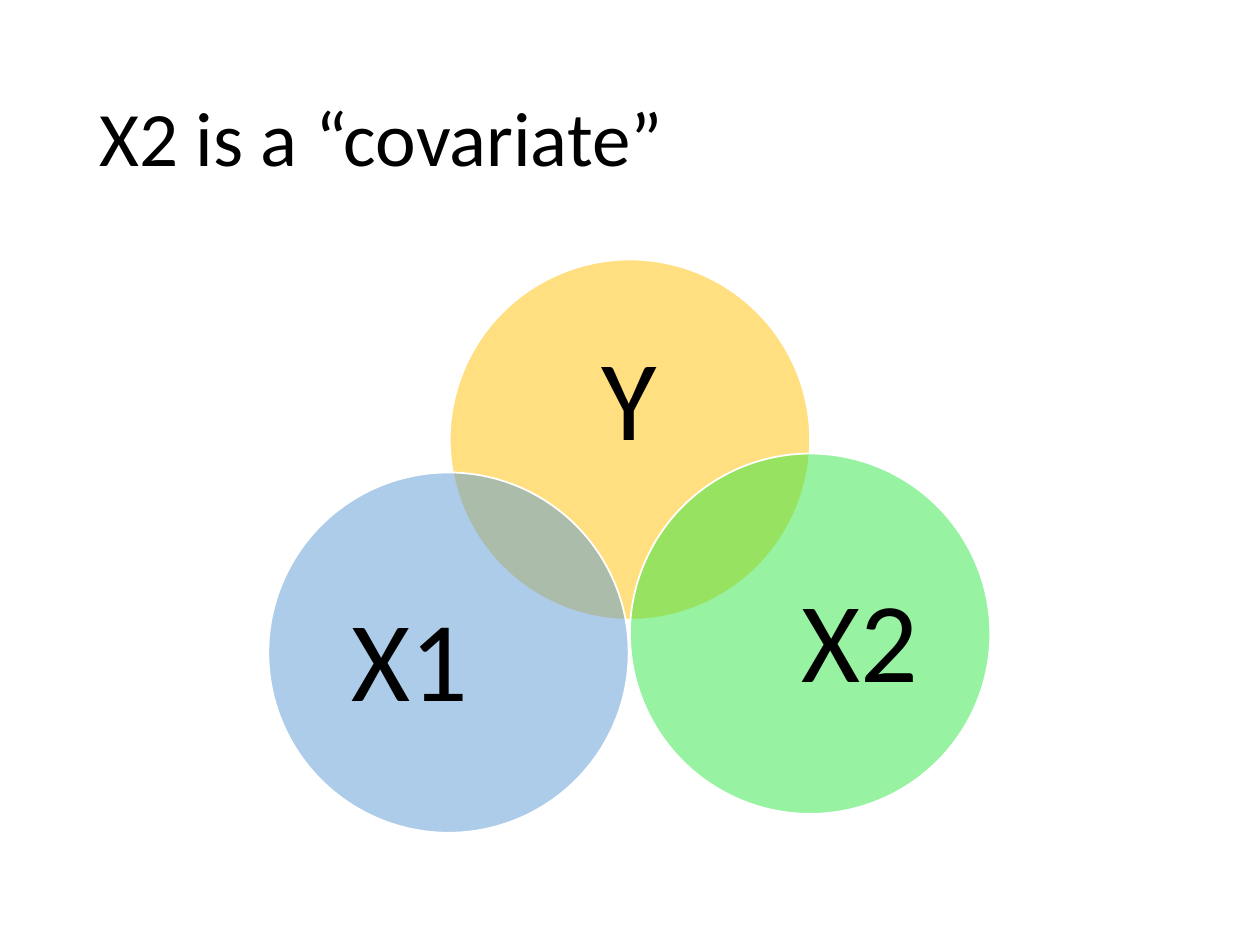
from lxml import etree
from pptx import Presentation
from pptx import util as u
from pptx.dml.color import RGBColor
from pptx.enum import shapes, text
from pptx.oxml.ns import qn

BLACK = RGBColor(0x00, 0x00, 0x00)
WHITE = RGBColor(0xFF, 0xFF, 0xFF)
GOLD = RGBColor(0xFF, 0xC0, 0x00)
GREEN = RGBColor(0x30, 0xE8, 0x45)
BLUE = RGBColor(0x5B, 0x9B, 0xD5)


class Deck:
    """Draws styled elements on a slide, placed on a grid of 0.01 inch units."""

    font = "Calibri"
    unit = u.Inches(0.01)
    size = 286

    def __init__(self):
        self.prs = Presentation()
        self.prs.slide_width, self.prs.slide_height = self.grid(1000, 750)
        self.slide = self.prs.slides.add_slide(self.prs.slide_layouts[6])

    def grid(self, *cells):
        return [self.unit * cell for cell in cells]

    def label(self, words, box, points, align, inset=(0, 0)):
        frame = self.slide.shapes.add_textbox(*self.grid(*box)).text_frame
        frame.word_wrap = True
        frame.vertical_anchor = text.MSO_ANCHOR.MIDDLE
        side, edge = self.grid(*inset)
        frame.margin_left = frame.margin_right = side
        frame.margin_top = frame.margin_bottom = edge
        para = frame.paragraphs[0]
        para.text = words
        para.alignment = align
        para.line_spacing = 0.9
        para.font.name = self.font
        para.font.size = u.Pt(points)
        para.font.color.rgb = BLACK

    def title(self, words):
        self.label(words, (69, 40, 862, 145), 44, text.PP_ALIGN.LEFT, (10, 5))

    def circle(self, words, left, top, color, box):
        oval = self.slide.shapes.add_shape(
            shapes.MSO_SHAPE.OVAL, *self.grid(left, top, self.size, self.size))
        oval.shadow.inherit = False
        oval.fill.solid()
        oval.fill.fore_color.rgb = color
        tint = oval.fill._xPr.find(".//" + qn("a:srgbClr"))
        etree.SubElement(tint, qn("a:alpha"), val="50000")
        oval.line.color.rgb = WHITE
        oval.line.width = u.Pt(1)
        self.label(words, box, 65, text.PP_ALIGN.CENTER)


def main():
    deck = Deck()
    deck.title("X2 is a “covariate”")
    deck.circle("Y", 357, 206, GOLD, (395, 256, 209, 128))
    deck.circle(" X2", 500, 360, GREEN, (587, 434, 171, 157))
    deck.circle("X1", 213, 375, BLUE, (240, 449, 171, 157))
    deck.prs.save("out.pptx")


if __name__ == "__main__":
    main()
